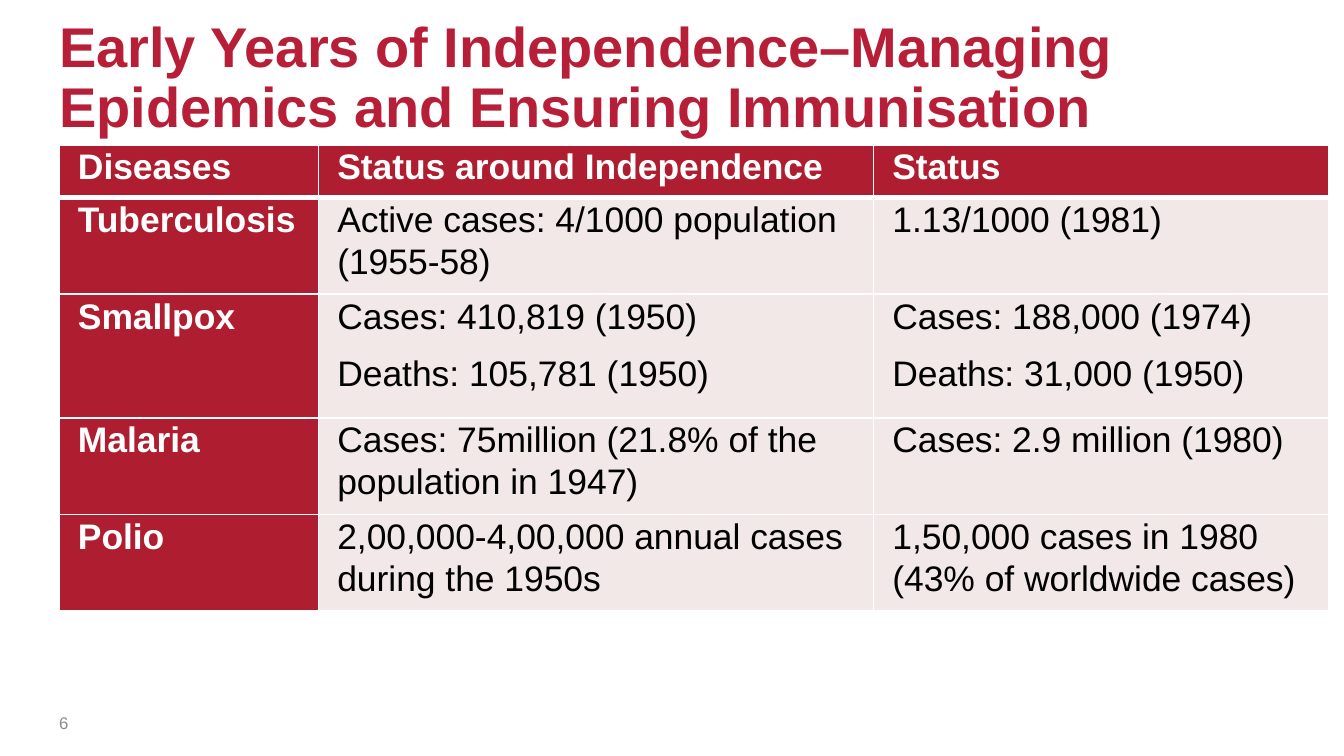
from dataclasses import dataclass

from lxml.etree import SubElement
from pptx import Presentation
from pptx.dml.color import RGBColor
from pptx.enum.text import MSO_ANCHOR as Anchor, MSO_AUTO_SIZE as AutoSize, PP_ALIGN as Align
from pptx.oxml.ns import qn
from pptx.util import Inches, Pt

FONT = "Arial"
CRIMSON = "B71F38"
DARK_RED = "AF1D30"
PALE_PINK = "F2E8E8"
WHITE = "FFFFFF"
BLACK = "000000"
GREY = "8C8C8C"
SLIDE_WIDTH = 10
SLIDE_HEIGHT = SLIDE_WIDTH * 9 / 16
LEFT = 0.44
COLUMN_WIDTHS = (1.93, 4.13, 3.39)
ROW_HEIGHTS = (0.39, 0.72, 0.92, 0.72, 0.72)


@dataclass(frozen=True)
class TextStyle:
    size: float
    color: str
    bold: bool = False
    line_spacing: float = 1.0
    space_after: float = 0


@dataclass(frozen=True)
class Disease:
    name: str
    early: tuple[str, ...]
    later: tuple[str, ...]


TITLE_STYLE = TextStyle(30, CRIMSON, True, 0.9)
NUMBER_STYLE = TextStyle(9, GREY, space_after=6)
HEADING_STYLE = TextStyle(19, WHITE, True, 1.07, 8)
BODY_STYLE = TextStyle(19, BLACK, False, 1.07, 8)

HEADINGS = ("Diseases", "Status around Independence", "Status")
DISEASES = (
    Disease("Tuberculosis", ("Active cases: 4/1000 population (1955-58)",), ("1.13/1000 (1981)",)),
    Disease(
        "Smallpox",
        ("Cases: 410,819 (1950)", "Deaths: 105,781 (1950)"),
        ("Cases: 188,000 (1974)", "Deaths: 31,000 (1950)"),
    ),
    Disease(
        "Malaria",
        ("Cases: 75million (21.8% of the population in 1947)",),
        ("Cases: 2.9 million (1980)",),
    ),
    Disease(
        "Polio",
        ("2,00,000-4,00,000 annual cases during the 1950s",),
        ("1,50,000 cases in 1980 (43% of worldwide cases)",),
    ),
)


def rgb(color: str) -> RGBColor:
    return RGBColor.from_string(color)


def write(frame, lines: tuple[str, ...], style: TextStyle) -> None:
    for index, line in enumerate(lines):
        paragraph = frame.add_paragraph() if index else frame.paragraphs[0]
        paragraph.alignment = Align.LEFT
        paragraph.line_spacing = style.line_spacing
        paragraph.space_before = Pt(0)
        paragraph.space_after = Pt(style.space_after)
        run = paragraph.add_run()
        run.text = line
        run.font.name = FONT
        run.font.size = Pt(style.size)
        run.font.bold = style.bold
        run.font.color.rgb = rgb(style.color)


def fill_box(box, text: str, style: TextStyle) -> None:
    frame = box.text_frame
    frame.word_wrap = True
    frame.auto_size = AutoSize.NONE
    frame.vertical_anchor = Anchor.MIDDLE
    frame.margin_left = frame.margin_right = 0
    frame.margin_top = frame.margin_bottom = Inches(0.06)
    write(frame, (text,), style)


def add_borders(cell, top: float, bottom: float) -> None:
    properties = cell._tc.get_or_add_tcPr()
    for side, width in (("L", 1), ("R", 1), ("T", top), ("B", bottom)):
        border = SubElement(properties, qn(f"a:ln{side}"), w=str(Pt(width)))
        SubElement(SubElement(border, qn("a:solidFill")), qn("a:srgbClr"), val=WHITE)


def fill_cell(cell, lines: tuple[str, ...], row: int, is_heading: bool) -> None:
    add_borders(cell, 3 if row == 1 else 1, 3 if row == 0 else 1)
    cell.fill.solid()
    cell.fill.fore_color.rgb = rgb(DARK_RED if is_heading else PALE_PINK)
    cell.margin_left = cell.margin_right = Inches(0.14)
    cell.margin_top = cell.margin_bottom = 0
    cell.vertical_anchor = Anchor.TOP
    write(cell.text_frame, lines, HEADING_STYLE if is_heading else BODY_STYLE)


def add_disease_table(slide) -> None:
    rows = [tuple((heading,) for heading in HEADINGS)]
    rows += [((disease.name,), disease.early, disease.later) for disease in DISEASES]
    table = slide.shapes.add_table(
        len(rows), len(HEADINGS), Inches(LEFT), Inches(1.08),
        Inches(sum(COLUMN_WIDTHS)), Inches(sum(ROW_HEIGHTS)),
    ).table
    table.first_col = True
    table.horz_banding = False
    for column, width in zip(table.columns, COLUMN_WIDTHS):
        column.width = Inches(width)
    for row, height in zip(table.rows, ROW_HEIGHTS):
        row.height = Inches(height)
    for row, contents in enumerate(rows):
        for column, lines in enumerate(contents):
            fill_cell(table.cell(row, column), lines, row, row == 0 or column == 0)


def main() -> None:
    deck = Presentation()
    deck.slide_width, deck.slide_height = Inches(SLIDE_WIDTH), Inches(SLIDE_HEIGHT)
    slide = deck.slides.add_slide(deck.slide_layouts[5])

    title = slide.shapes.title
    title.left, title.top = Inches(LEFT), Inches(0.1)
    title.width, title.height = Inches(9.45), Inches(0.98)
    fill_box(
        title,
        "Early Years of Independence–Managing Epidemics and Ensuring Immunisation",
        TITLE_STYLE,
    )

    page_number = slide.shapes.add_textbox(Inches(LEFT), Inches(5.22), Inches(0.43), Inches(0.31))
    fill_box(page_number, "6", NUMBER_STYLE)
    add_disease_table(slide)
    deck.save("out.pptx")


if __name__ == "__main__":
    main()
